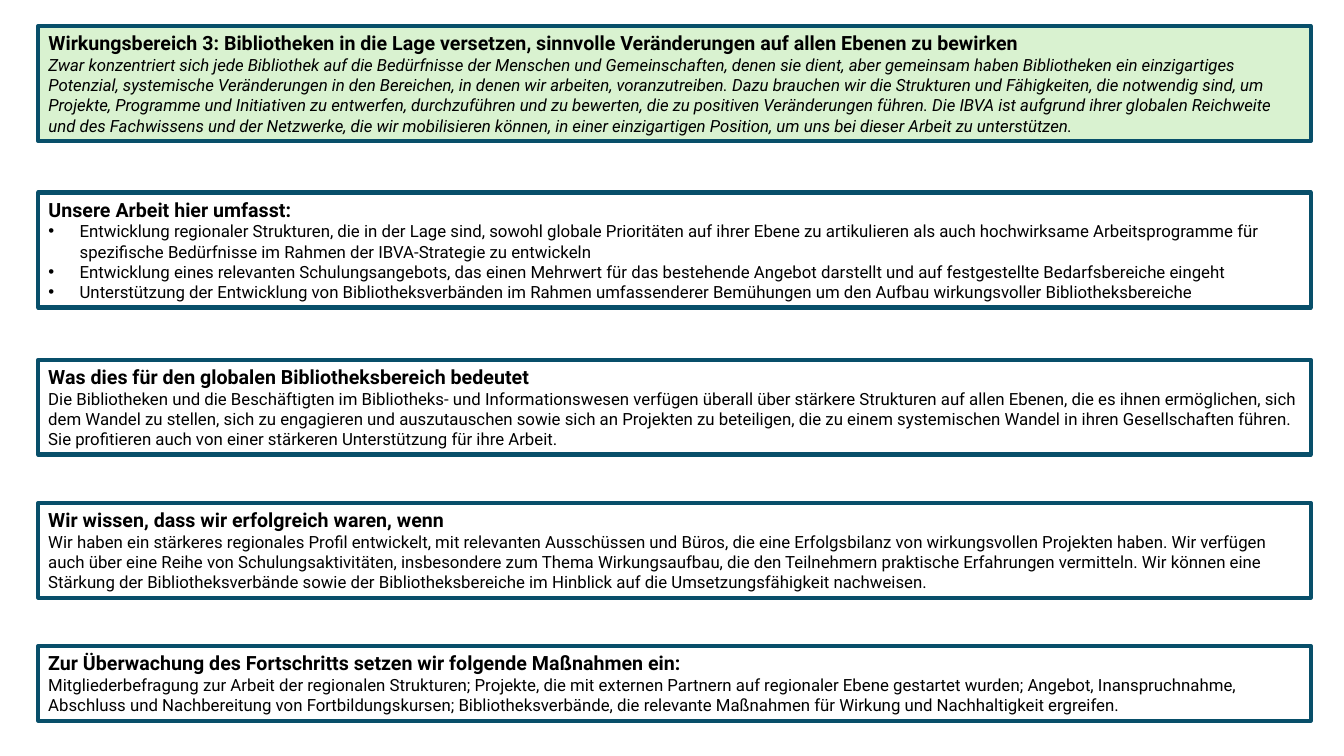
from lxml.etree import SubElement
from pptx import Presentation
from pptx.dml.color import RGBColor
from pptx.enum.shapes import MSO_SHAPE
from pptx.enum.text import MSO_ANCHOR, MSO_AUTO_SIZE, PP_ALIGN
from pptx.oxml.ns import qn
from pptx.util import Inches, Pt

SLIDE_WIDTH, SLIDE_HEIGHT = 13.33, 7.5
BOX_LEFT, BOX_WIDTH = 0.38, 12.62
FRAME_HEIGHT, LINE_HEIGHT = 0.34, 0.2  # insets plus heading; one line of body text
BULLET_INDENT = 0.31
FONT = "Roboto"
BORDER, GREEN, WHITE, BLACK = "084F6A", "D9F2D0", "FFFFFF", "000000"

IMPACT_AREA = (
    "Wirkungsbereich 3: Bibliotheken in die Lage versetzen, sinnvolle Veränderungen auf allen Ebenen zu bewirken",
    "Zwar konzentriert sich jede Bibliothek auf die Bedürfnisse der Menschen und Gemeinschaften, denen sie dient, "
    "aber gemeinsam haben Bibliotheken ein einzigartiges Potenzial, systemische Veränderungen in den Bereichen, "
    "in denen wir arbeiten, voranzutreiben. Dazu brauchen wir die Strukturen und Fähigkeiten, die notwendig sind, "
    "um Projekte, Programme und Initiativen zu entwerfen, durchzuführen und zu bewerten, die zu positiven "
    "Veränderungen führen. Die IBVA ist aufgrund ihrer globalen Reichweite und des Fachwissens und der Netzwerke, "
    "die wir mobilisieren können, in einer einzigartigen Position, um uns bei dieser Arbeit zu unterstützen.",
)
WORK_HEADING = "Unsere Arbeit hier umfasst:"
WORK_ITEMS = [
    "Entwicklung regionaler Strukturen, die in der Lage sind, sowohl globale Prioritäten auf ihrer Ebene zu "
    "artikulieren als auch hochwirksame Arbeitsprogramme für spezifische Bedürfnisse im Rahmen der "
    "IBVA-Strategie zu entwickeln",
    "Entwicklung eines relevanten Schulungsangebots, das einen Mehrwert für das bestehende Angebot darstellt "
    "und auf festgestellte Bedarfsbereiche eingeht",
    "Unterstützung der Entwicklung von Bibliotheksverbänden im Rahmen umfassenderer Bemühungen um den Aufbau "
    "wirkungsvoller Bibliotheksbereiche",
]
# top, number of body lines, heading, body
SECTIONS = [
    (3.57, 3, "Was dies für den globalen Bibliotheksbereich bedeutet",
     "Die Bibliotheken und die Beschäftigten im Bibliotheks- und Informationswesen verfügen überall über stärkere "
     "Strukturen auf allen Ebenen, die es ihnen ermöglichen, sich dem Wandel zu stellen, sich zu engagieren und "
     "auszutauschen sowie sich an Projekten zu beteiligen, die zu einem systemischen Wandel in ihren "
     "Gesellschaften führen. Sie profitieren auch von einer stärkeren Unterstützung für ihre Arbeit."),
    (4.99, 3, "Wir wissen, dass wir erfolgreich waren, wenn",
     "Wir haben ein stärkeres regionales Profil entwickelt, mit relevanten Ausschüssen und Büros, die eine "
     "Erfolgsbilanz von wirkungsvollen Projekten haben. Wir verfügen auch über eine Reihe von "
     "Schulungsaktivitäten, insbesondere zum Thema Wirkungsaufbau, die den Teilnehmern praktische Erfahrungen "
     "vermitteln. Wir können eine Stärkung der Bibliotheksverbände sowie der Bibliotheksbereiche im Hinblick "
     "auf die Umsetzungsfähigkeit nachweisen."),
    (6.41, 2, "Zur Überwachung des Fortschritts setzen wir folgende Maßnahmen ein:",
     "Mitgliederbefragung zur Arbeit der regionalen Strukturen; Projekte, die mit externen Partnern auf "
     "regionaler Ebene gestartet wurden; Angebot, Inanspruchnahme, Abschluss und Nachbereitung von "
     "Fortbildungskursen; Bibliotheksverbände, die relevante Maßnahmen für Wirkung und Nachhaltigkeit ergreifen."),
]


def color(hex_value):
    return RGBColor.from_string(hex_value)


def set_bullet(paragraph, bulleted):
    """Give the paragraph a hanging bullet, or clear any inherited one."""
    properties = paragraph._p.get_or_add_pPr()
    indent = Inches(BULLET_INDENT) if bulleted else 0
    properties.set("marL", str(indent))
    properties.set("indent", str(-indent))
    if bulleted:
        SubElement(properties, qn("a:buFont"), typeface="Arial")
        SubElement(properties, qn("a:buChar"), char="•")
    else:
        SubElement(properties, qn("a:buNone"))


def write_paragraph(paragraph, text, size=12, bold=False, italic=False, bulleted=False):
    paragraph.alignment = PP_ALIGN.LEFT
    paragraph.line_spacing = 1.0
    paragraph.space_before = paragraph.space_after = Pt(0)
    set_bullet(paragraph, bulleted)
    run = paragraph.add_run()
    run.text = text
    run.font.name = FONT
    run.font.size = Pt(size)
    run.font.bold = bold
    run.font.italic = italic
    run.font.color.rgb = color(BLACK)


def format_box(shape, top, line_count, fill=WHITE):
    """Place and frame a box of fixed height, enough for its heading and body lines."""
    shape.left, shape.top = Inches(BOX_LEFT), Inches(top)
    shape.width = Inches(BOX_WIDTH)
    shape.height = Inches(FRAME_HEIGHT + LINE_HEIGHT * line_count)
    shape.fill.solid()
    shape.fill.fore_color.rgb = color(fill)
    shape.line.color.rgb = color(BORDER)
    shape.line.width = Pt(3)
    frame = shape.text_frame
    frame.word_wrap = True
    frame.auto_size = MSO_AUTO_SIZE.NONE
    frame.vertical_anchor = MSO_ANCHOR.TOP


def write_box(shape, heading, body, italic=False, bulleted=False):
    frame = shape.text_frame
    write_paragraph(frame.paragraphs[0], heading, size=14, bold=True)
    for text in body:
        write_paragraph(frame.add_paragraph(), text, italic=italic, bulleted=bulleted)


def add_section(slide, top, line_count, heading, body):
    shape = slide.shapes.add_shape(MSO_SHAPE.RECTANGLE, 0, 0, 0, 0)
    shape.shadow.inherit = False
    format_box(shape, top, line_count)
    shape.text_frame.auto_size = MSO_AUTO_SIZE.SHAPE_TO_FIT_TEXT
    write_box(shape, heading, [body])


def main():
    presentation = Presentation()
    presentation.slide_width = Inches(SLIDE_WIDTH)
    presentation.slide_height = Inches(SLIDE_HEIGHT)
    slide = presentation.slides.add_slide(presentation.slide_layouts[1])

    title, work_list = slide.shapes.title, slide.placeholders[1]
    format_box(title, 0.26, 4, fill=GREEN)
    write_box(title, IMPACT_AREA[0], IMPACT_AREA[1:], italic=True)
    format_box(work_list, 1.91, 4)
    write_box(work_list, WORK_HEADING, WORK_ITEMS, bulleted=True)
    for section in SECTIONS:
        add_section(slide, *section)

    presentation.save("out.pptx")


if __name__ == "__main__":
    main()
